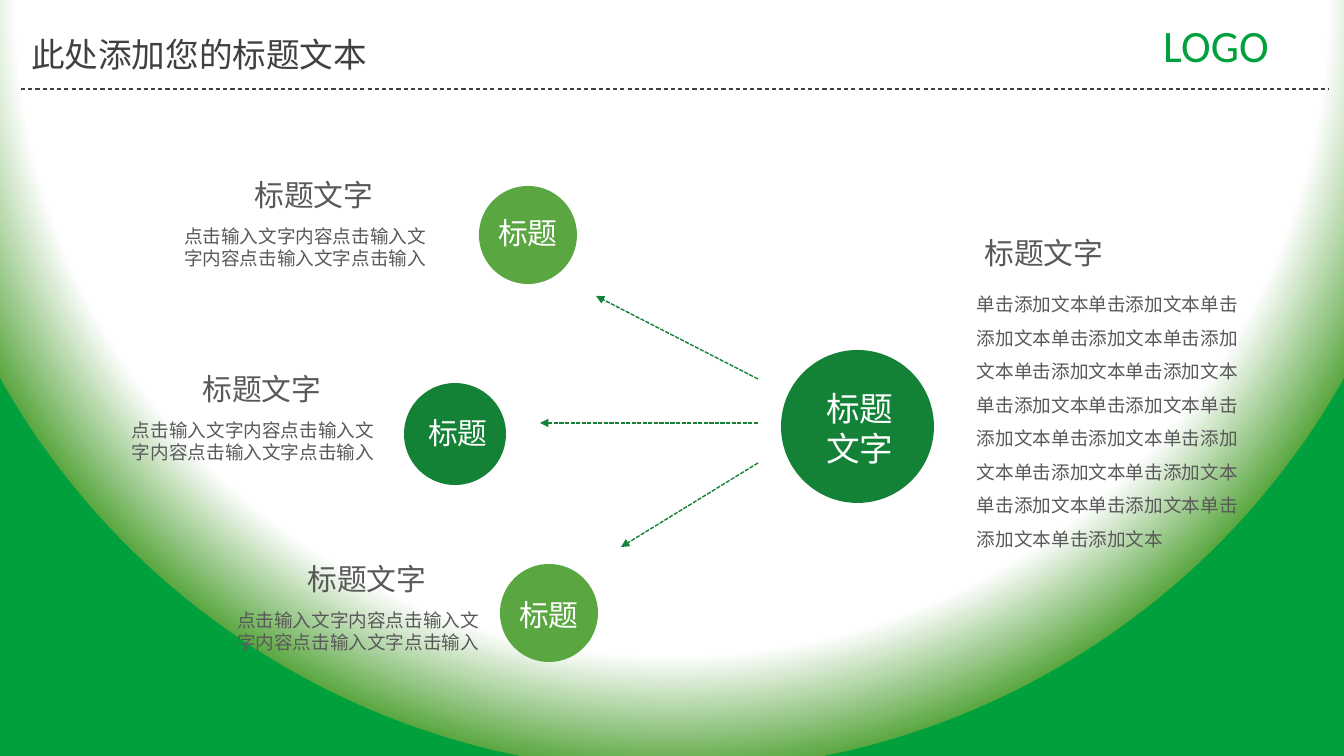
from pptx import Presentation, util as u
from pptx.dml.color import RGBColor
from pptx.enum import dml, shapes, text
from pptx.oxml import parse_xml
from pptx.oxml.ns import nsdecls, qn

PX = 9074  # EMU per pixel
GREEN = RGBColor(0x00, 0xA0, 0x3C)
DARK_GREEN = RGBColor(0x13, 0x82, 0x36)
LIGHT_GREEN = RGBColor(0x5A, 0xA7, 0x41)
WHITE = RGBColor(0xFF, 0xFF, 0xFF)
TITLE_GREY = RGBColor(0x40, 0x40, 0x40)
TEXT_GREY = RGBColor(0x59, 0x59, 0x59)
CENTER = text.PP_ALIGN.CENTER
LEFT = text.PP_ALIGN.LEFT
HEADING = "标题文字"
ITEM_TEXT = "点击输入文字内容点击输入文字内容点击输入文字点击输入"
MAIN_TEXT = "单击添加文本" * 18


class SlideBuilder:
    font = "Noto Sans CJK SC"

    def __init__(self, slide):
        self.slide = slide

    def background(self, stops):
        stop_xml = "".join(
            f'<a:gs pos="{percent * 1000}"><a:srgbClr val="{color}"/></a:gs>'
            for percent, color in stops)
        background = parse_xml(
            f'<p:bg {nsdecls("p", "a")}><p:bgPr><a:gradFill rotWithShape="1">'
            f'<a:gsLst>{stop_xml}</a:gsLst><a:path path="circle">'
            '<a:fillToRect l="50000" t="-80000" r="50000" b="180000"/></a:path>'
            '</a:gradFill><a:effectLst/></p:bgPr></p:bg>')
        self.slide.element.cSld.insert(0, background)

    def fill_text(self, shape, content, size, color, align=LEFT, inset=True,
                  font=None, spacing=None):
        frame = shape.text_frame
        frame.text = content
        frame.word_wrap = True
        frame.auto_size = text.MSO_AUTO_SIZE.SHAPE_TO_FIT_TEXT
        frame.vertical_anchor = text.MSO_ANCHOR.TOP
        if not inset:
            frame.margin_left = frame.margin_right = 0
            frame.margin_top = frame.margin_bottom = 0
        for paragraph in frame.paragraphs:
            paragraph.alignment = align
            paragraph.line_spacing = spacing
            for run in paragraph.runs:
                run.font.size = u.Pt(size)
                run.font.color.rgb = color
                run.font.name = font or self.font
                properties = run._r.get_or_add_rPr()
                properties.append(properties.makeelement(
                    qn("a:ea"), {"typeface": font or self.font}))

    def title(self, content, x, y, width, height):
        shape = self.slide.shapes.title
        shape.left, shape.top = x * PX, y * PX
        shape.width, shape.height = width * PX, height * PX
        self.fill_text(shape, content, 24, TITLE_GREY)

    def text_box(self, content, x, y, width, height, size, color, **style):
        shape = self.slide.shapes.add_textbox(
            x * PX, y * PX, width * PX, height * PX)
        self.fill_text(shape, content, size, color, **style)

    def heading(self, content, x, y, color=TEXT_GREY):
        self.text_box(content, x, y, 152, 36, 21.3, color,
                      align=CENTER, inset=False)

    def circle(self, x, y, diameter, color):
        shape = self.slide.shapes.add_shape(
            shapes.MSO_SHAPE.OVAL, x * PX, y * PX, diameter * PX, diameter * PX)
        shape.shadow.inherit = False
        shape.fill.solid()
        shape.fill.fore_color.rgb = color
        shape.line.fill.background()

    def line(self, start, end, color, width, dash, arrow=False):
        connector = self.slide.shapes.add_connector(
            shapes.MSO_CONNECTOR.STRAIGHT, *(value * PX for value in start + end))
        connector.line.color.rgb = color
        connector.line.width = u.Pt(width)
        connector.line.dash_style = dash
        properties = connector._element.spPr
        if arrow:
            properties.find(qn("a:ln")).append(
                parse_xml(f'<a:tailEnd {nsdecls("a")} type="triangle"/>'))
        properties.append(parse_xml(f'<a:effectLst {nsdecls("a")}/>'))


def main():
    presentation = Presentation()
    presentation.slide_width, presentation.slide_height = 1344 * PX, 756 * PX
    slide = presentation.slides.add_slide(presentation.slide_layouts[5])
    builder = SlideBuilder(slide)

    # Background and header
    builder.background([(0, WHITE), (85, WHITE), (100, LIGHT_GREEN), (100, GREEN)])
    builder.title("此处添加您的标题文本", 21, 29, 492, 50)
    builder.line((21, 89), (1329, 89), TITLE_GREY, 0.75, dml.MSO_LINE.DASH)
    builder.text_box("LOGO", 1125, 13, 182, 64, 32, GREEN,
                     align=CENTER, font="Calibri")

    # Arrows from the main circle to the items
    for start_y, tip in ((379, (596, 296)), (463, (621, 547)), (423, (540, 423))):
        builder.line((758, start_y), tip, DARK_GREEN, 1,
                     dml.MSO_LINE.SQUARE_DOT, arrow=True)

    # Main circle and its description
    builder.circle(781, 350, 153, DARK_GREEN)
    builder.text_box("标题\n文字", 784, 388, 152, 82, 24, WHITE,
                     align=CENTER, inset=False)
    builder.heading(HEADING, 968, 235)
    builder.text_box(MAIN_TEXT, 967, 277, 296, 350, 13.3, TEXT_GREY, spacing=1.5)

    # Items: heading corner, circle corner and diameter, label corner, colour
    items = (
        ((238, 177), (479, 186, 98), (452, 215), LIGHT_GREEN),
        ((186, 371), (404, 383, 102), (382, 415), DARK_GREEN),
        ((291, 561), (500, 564, 98), (473, 597), LIGHT_GREEN),
    )
    for (x, y), circle, label, color in items:
        builder.circle(*circle, color)
        builder.heading("标题", *label, WHITE)
        builder.heading(HEADING, x, y)
        builder.text_box(ITEM_TEXT, x - 54, y + 48, 245, 68, 13.3, TEXT_GREY,
                         inset=False)

    presentation.save("out.pptx")


if __name__ == "__main__":
    main()
